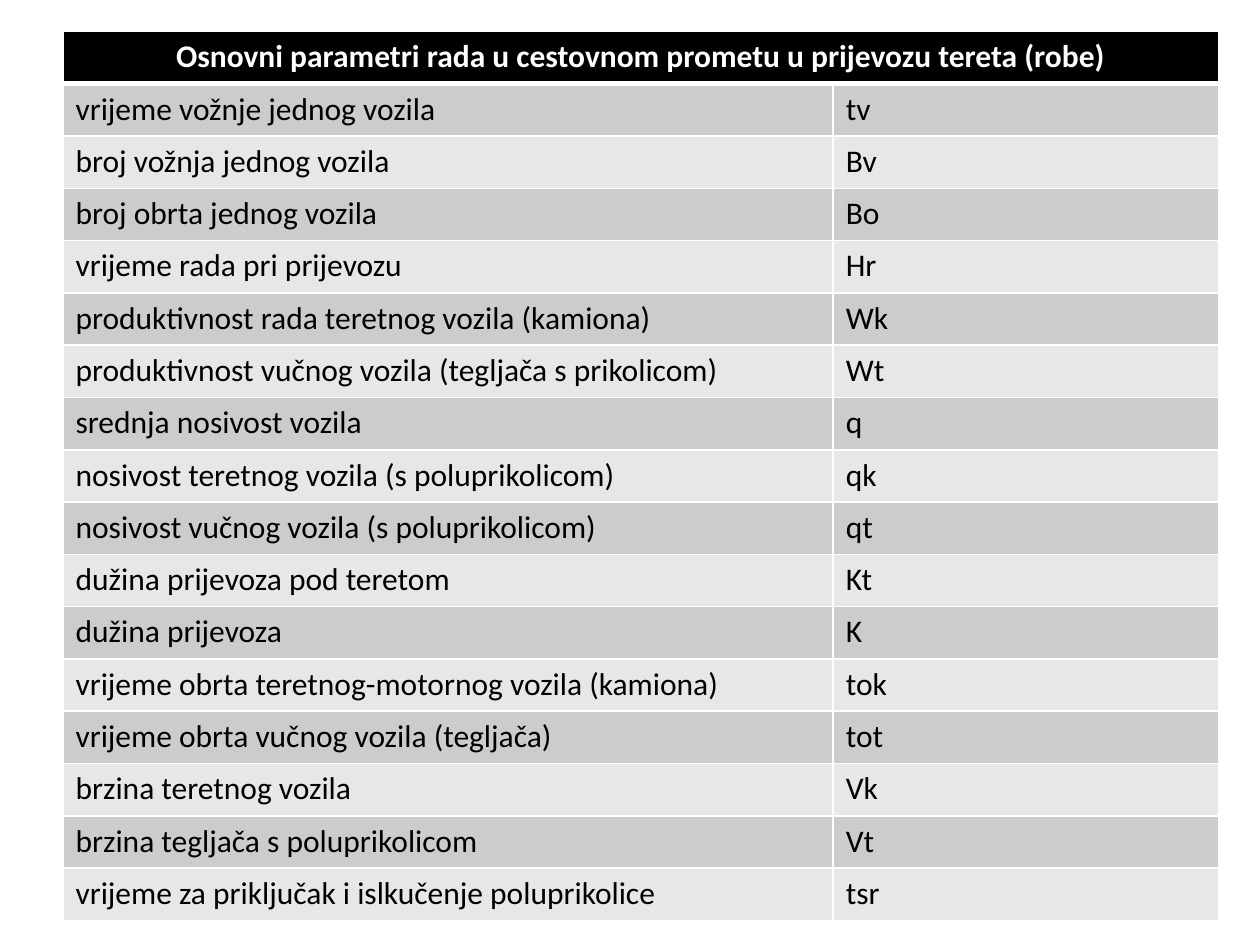
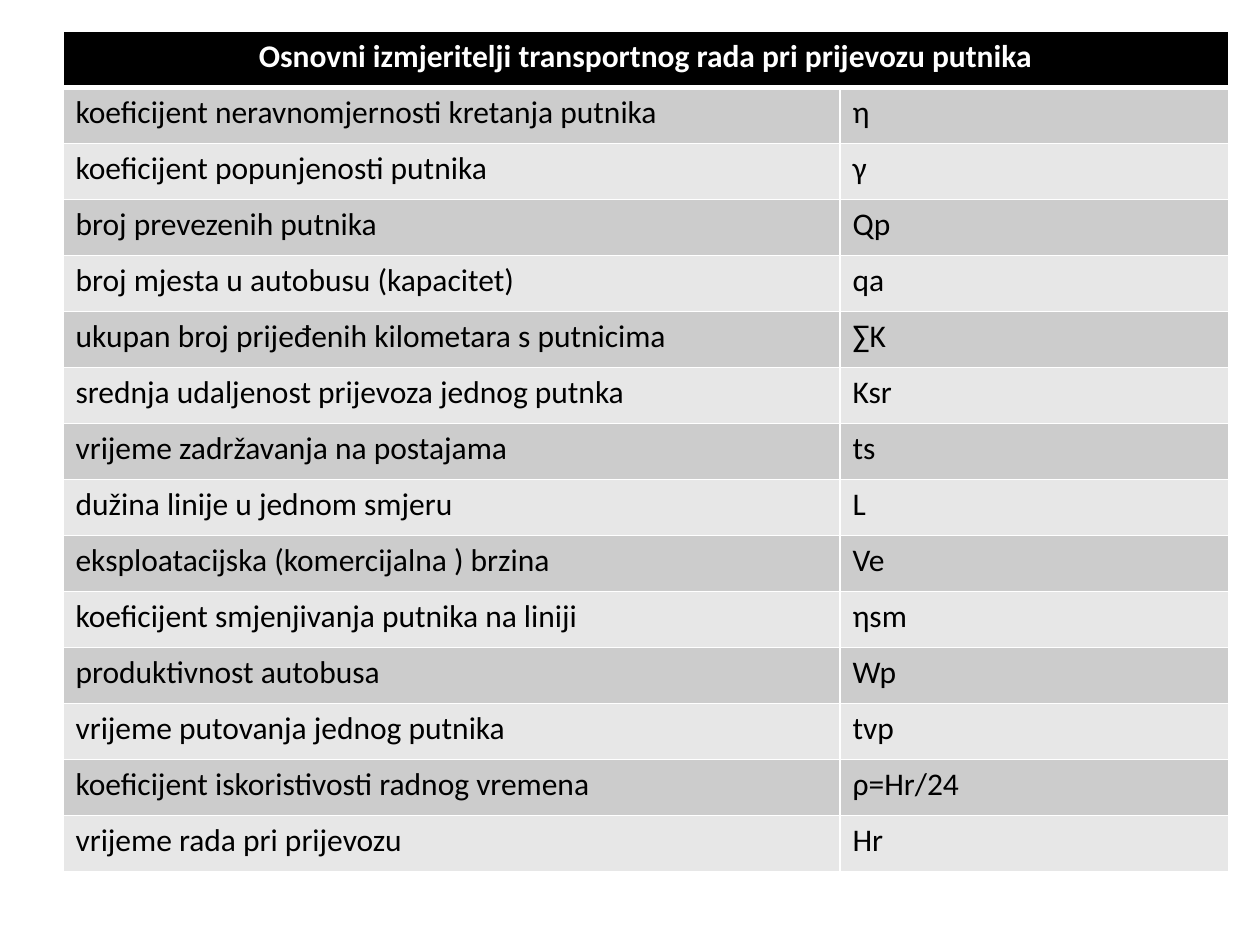
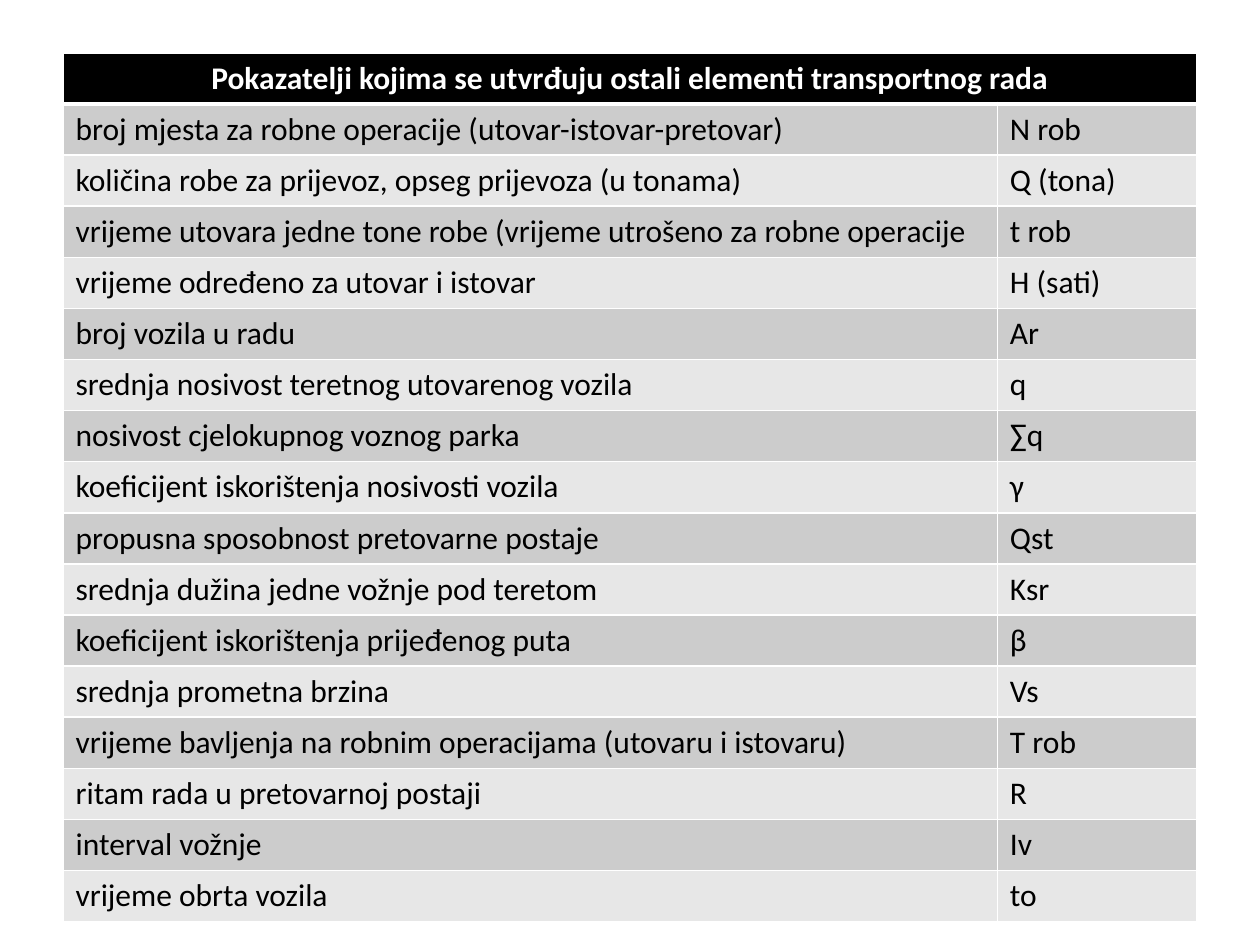
"""Builds three slides of transport indicators, each a banded two-column table."""
from dataclasses import dataclass

from lxml.etree import SubElement
from pptx import Presentation
from pptx.dml.color import RGBColor
from pptx.enum.text import PP_ALIGN as Align
from pptx.oxml.ns import qn
from pptx.slide import Slide
from pptx.table import _Cell as Cell
from pptx.util import Inches, Pt


@dataclass(frozen=True)
class Theme:
    """Colours, type and line widths shared by all tables."""
    font: str = "Calibri"
    size: int = 18
    header_fill: str = "000000"
    header_text: str = "FFFFFF"
    body_text: str = "000000"
    bands: tuple[str, str] = ("CCCCCC", "E7E7E7")
    rule: str = "FFFFFF"
    thin: int = 1
    thick: int = 3


@dataclass(frozen=True)
class IndicatorTable:
    """A heading, its indicator and symbol pairs, and its place in inches."""
    heading: str
    indicators: tuple[tuple[str, str], ...]
    top: float
    width: float
    height: float
    name_share: float = 2 / 3


THEME = Theme()
LEFT = 0.5

TABLES = (
    IndicatorTable(
        "Osnovni parametri rada u cestovnom prometu u prijevozu tereta (robe)",
        (
            ("vrijeme vožnje jednog vozila", "tv"),
            ("broj vožnja jednog vozila", "Bv"),
            ("broj obrta jednog vozila", "Bo"),
            ("vrijeme rada pri prijevozu", "Hr"),
            ("produktivnost rada teretnog vozila (kamiona)", "Wk"),
            ("produktivnost vučnog vozila (tegljača s prikolicom)", "Wt"),
            ("srednja nosivost vozila", "q"),
            ("nosivost teretnog vozila (s poluprikolicom)", "qk"),
            ("nosivost vučnog vozila (s poluprikolicom)", "qt"),
            ("dužina prijevoza pod teretom", "Kt"),
            ("dužina prijevoza", "K"),
            ("vrijeme obrta teretnog-motornog vozila (kamiona)", "tok"),
            ("vrijeme obrta vučnog vozila (tegljača)", "tot"),
            ("brzina teretnog vozila", "Vk"),
            ("brzina tegljača s poluprikolicom", "Vt"),
            ("vrijeme za priključak i islkučenje poluprikolice", "tsr"),
        ),
        top=0.25, width=9.17, height=7.06,
    ),
    IndicatorTable(
        "Osnovni izmjeritelji transportnog rada pri prijevozu putnika",
        (
            ("koeficijent neravnomjernosti kretanja putnika", "η"),
            ("koeficijent popunjenosti putnika", "γ"),
            ("broj prevezenih putnika", "Qp"),
            ("broj mjesta u autobusu (kapacitet)", "qa"),
            ("ukupan broj prijeđenih kilometara s putnicima", "∑K"),
            ("srednja udaljenost prijevoza jednog putnka", "Ksr"),
            ("vrijeme zadržavanja na postajama", "ts"),
            ("dužina linije u jednom smjeru", "L"),
            ("eksploatacijska (komercijalna ) brzina", "Ve"),
            ("koeficijent smjenjivanja putnika na liniji", "ηsm"),
            ("produktivnost autobusa", "Wp"),
            ("vrijeme putovanja jednog putnika", "tvp"),
            ("koeficijent iskoristivosti radnog vremena", "ρ=Hr/24"),
            ("vrijeme rada pri prijevozu", "Hr"),
        ),
        top=0.25, width=9.25, height=6.67,
    ),
    IndicatorTable(
        "Pokazatelji kojima se utvrđuju ostali elementi transportnog rada",
        (
            ("broj mjesta za robne operacije (utovar-istovar-pretovar)", "N rob"),
            ("količina robe za prijevoz, opseg prijevoza (u tonama)", "Q (tona)"),
            ("vrijeme utovara jedne tone robe (vrijeme utrošeno za robne operacije", "t rob"),
            ("vrijeme određeno za utovar i istovar", "H (sati)"),
            ("broj vozila u radu", "Ar"),
            ("srednja nosivost teretnog utovarenog vozila", "q"),
            ("nosivost cjelokupnog voznog parka", "∑q"),
            ("koeficijent iskorištenja nosivosti vozila", "γ"),
            ("propusna sposobnost pretovarne postaje", "Qst"),
            ("srednja dužina jedne vožnje pod teretom", "Ksr"),
            ("koeficijent iskorištenja prijeđenog puta", "β"),
            ("srednja prometna brzina", "Vs"),
            ("vrijeme bavljenja na robnim operacijama (utovaru i istovaru)", "T rob"),
            ("ritam rada u pretovarnoj postaji", "R"),
            ("interval vožnje", "Iv"),
            ("vrijeme obrta vozila", "to"),
        ),
        top=0.42, width=9, height=6.89, name_share=0.824,
    ),
)


def draw_borders(cell: Cell, top: int, bottom: int) -> None:
    """Rule all four sides of a cell, with its own widths above and below."""
    properties = cell._tc.get_or_add_tcPr()
    widths = {"a:lnL": THEME.thin, "a:lnR": THEME.thin, "a:lnT": top, "a:lnB": bottom}
    for side, width in widths.items():
        line = SubElement(properties, qn(side), w=str(Pt(width)))
        fill = SubElement(line, qn("a:solidFill"))
        SubElement(fill, qn("a:srgbClr"), val=THEME.rule)


def format_cell(cell: Cell, row: int) -> None:
    """Give a cell the borders, fill and type of its row."""
    is_header = row == 0
    draw_borders(
        cell,
        top=THEME.thick if row == 1 else THEME.thin,
        bottom=THEME.thick if is_header else THEME.thin,
    )
    fill = THEME.header_fill if is_header else THEME.bands[(row - 1) % 2]
    cell.fill.solid()
    cell.fill.fore_color.rgb = RGBColor.from_string(fill)
    paragraph = cell.text_frame.paragraphs[0]
    paragraph.alignment = Align.CENTER if is_header else Align.LEFT
    text_color = THEME.header_text if is_header else THEME.body_text
    for run in paragraph.runs:
        run.font.name = THEME.font
        run.font.size = Pt(THEME.size)
        run.font.bold = is_header
        run.font.color.rgb = RGBColor.from_string(text_color)


def draw_table(slide: Slide, content: IndicatorTable) -> None:
    """Draw one indicator table with a merged heading row."""
    rows = ((content.heading, ""), *content.indicators)
    table = slide.shapes.add_table(
        len(rows), 2, Inches(LEFT), Inches(content.top),
        Inches(content.width), Inches(content.height),
    ).table
    for column, share in zip(table.columns, (content.name_share, 1 - content.name_share)):
        column.width = Inches(content.width * share)
    table.cell(0, 0).merge(table.cell(0, 1))
    for row, texts in enumerate(rows):
        for column, text in enumerate(texts):
            cell = table.cell(row, column)
            cell.text_frame.text = text
            format_cell(cell, row)


def main() -> None:
    """Build and save the presentation."""
    presentation = Presentation()
    presentation.slide_width, presentation.slide_height = Inches(10), Inches(7.5)
    blank_layout = presentation.slide_layouts.get_by_name("Blank")
    for content in TABLES:
        draw_table(presentation.slides.add_slide(blank_layout), content)
    presentation.save("out.pptx")


if __name__ == "__main__":
    main()
